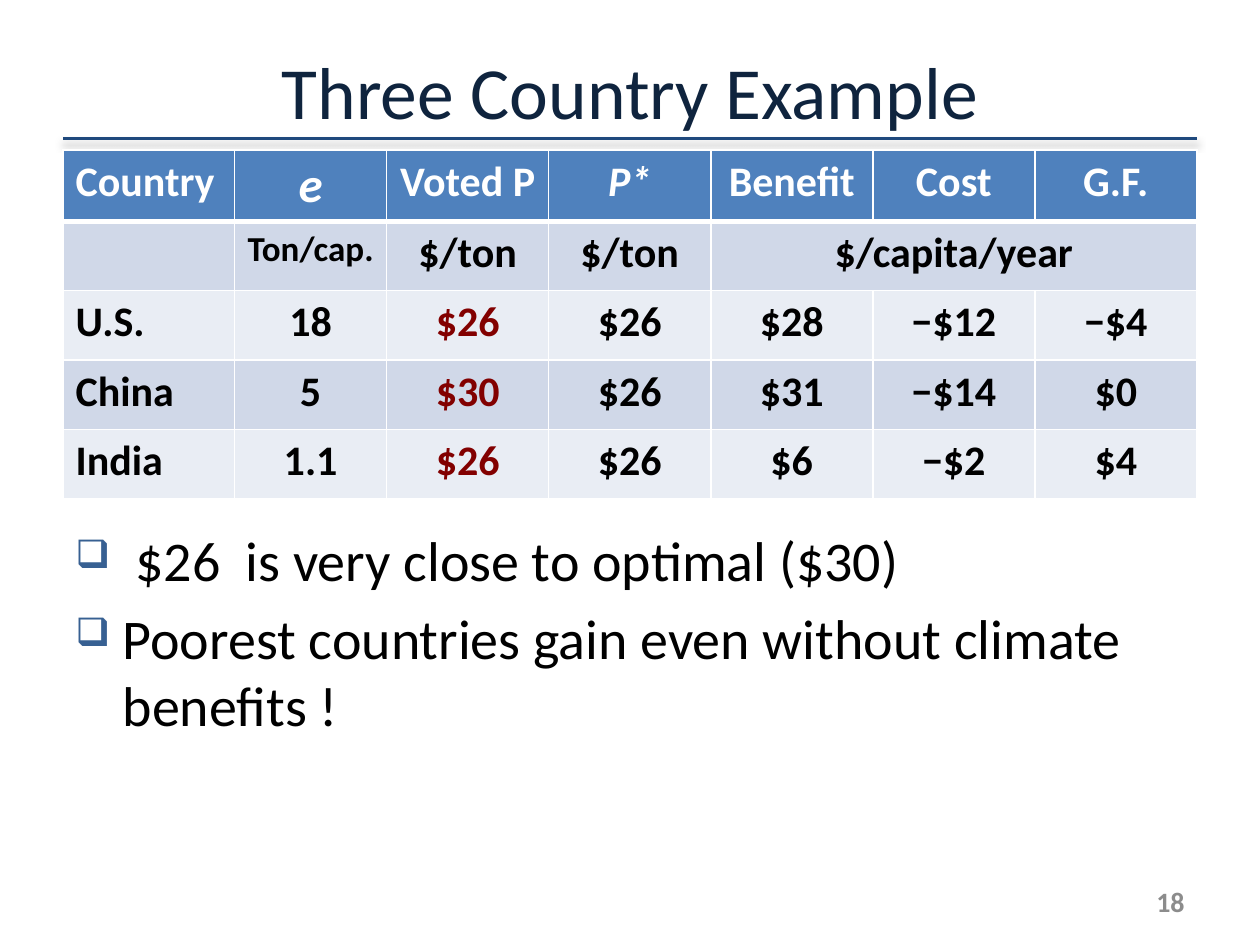
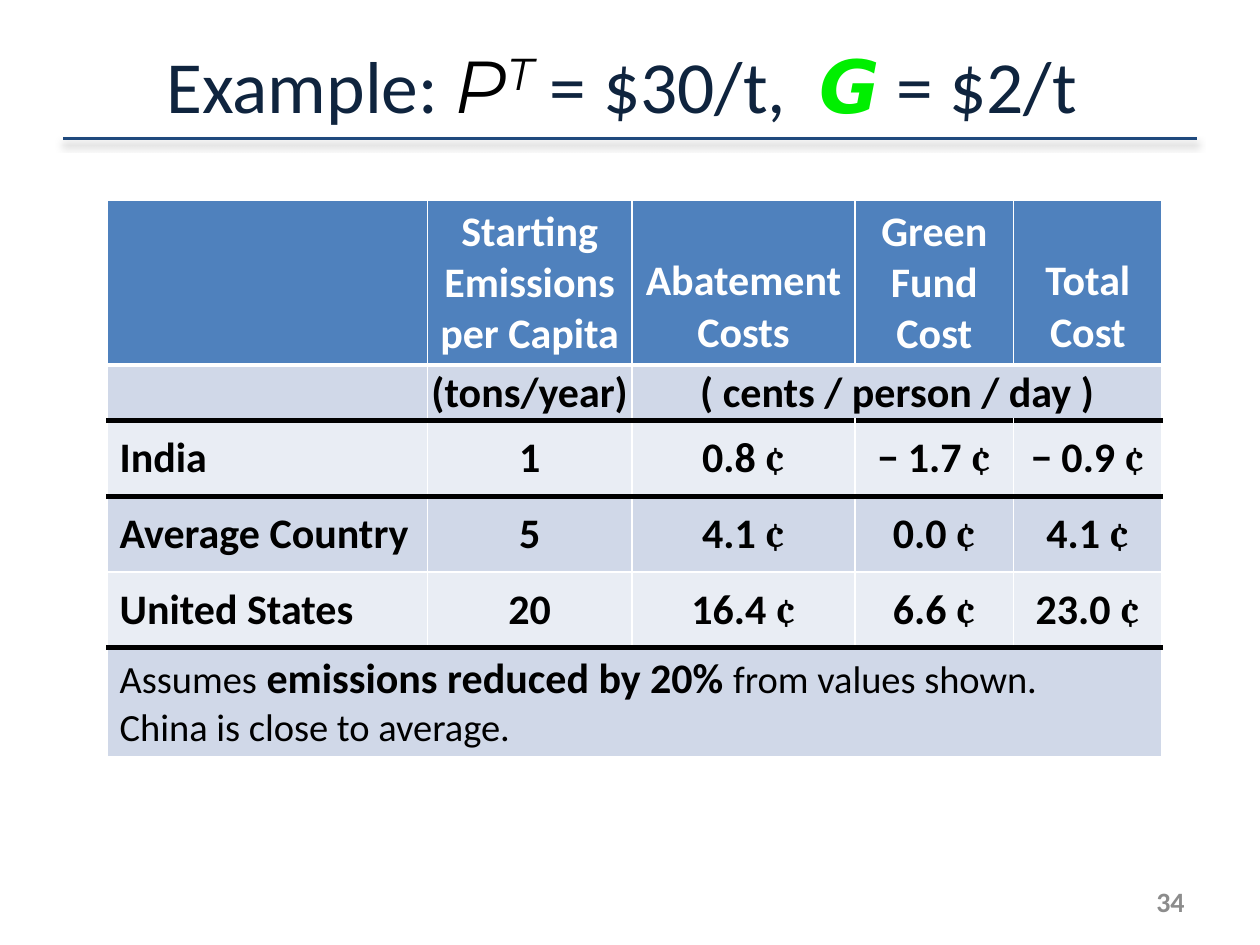
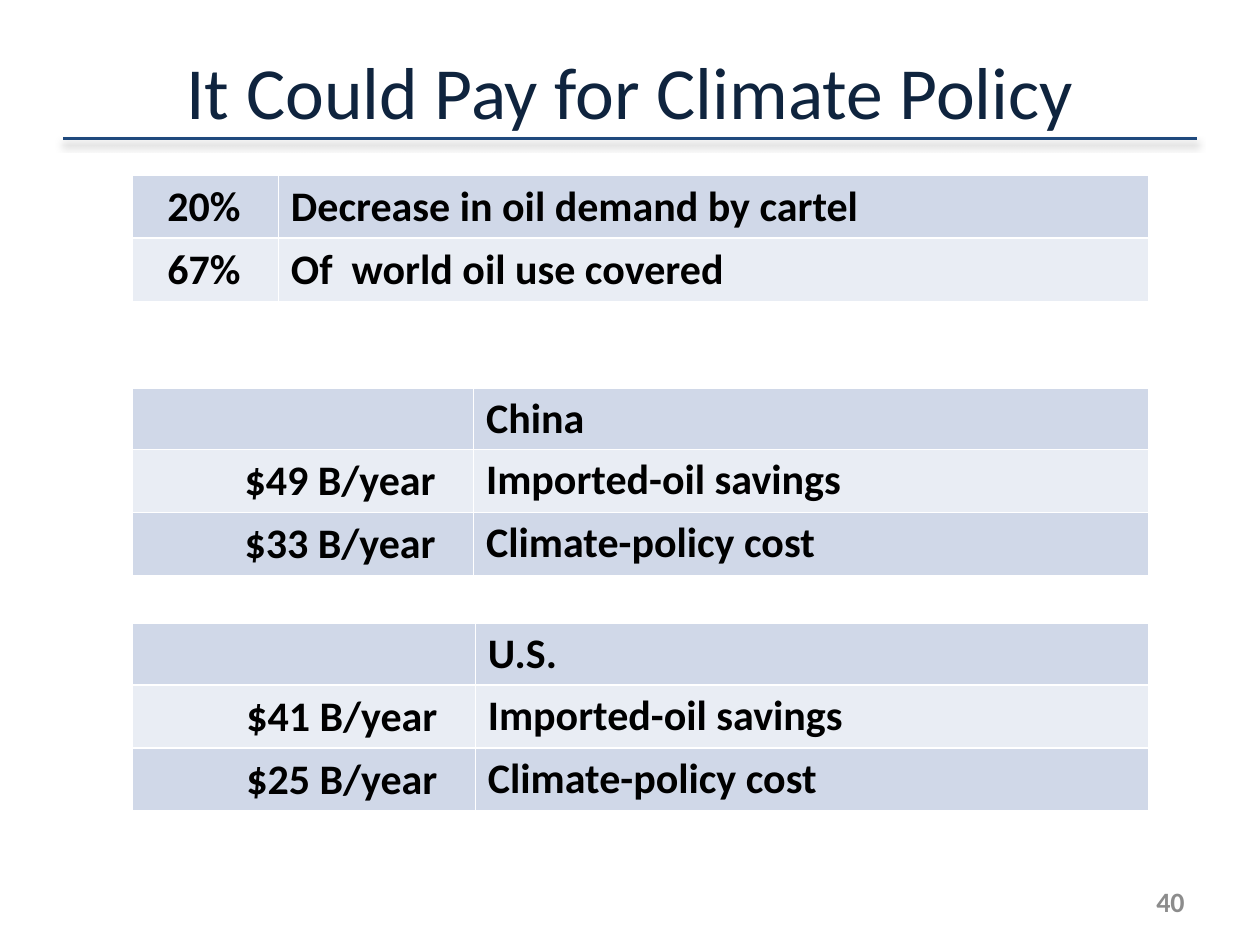
"""Build three climate policy slides with tables of costs and gains."""
from lxml import etree
from pptx import Presentation
from pptx.dml.color import RGBColor
from pptx.enum.shapes import MSO_CONNECTOR
from pptx.enum.text import MSO_ANCHOR, PP_ALIGN
from pptx.oxml import parse_xml
from pptx.oxml.ns import nsdecls, qn
from pptx.util import Pt

STRAIGHT = MSO_CONNECTOR.STRAIGHT
MIDDLE, BOTTOM = MSO_ANCHOR.MIDDLE, MSO_ANCHOR.BOTTOM
LEFT, CENTER, RIGHT = PP_ALIGN.LEFT, PP_ALIGN.CENTER, PP_ALIGN.RIGHT
SIDES = {"l": LEFT, "c": CENTER, "r": RIGHT}


class Theme:
    face, serif, math, strong = "Calibri", "Cambria", "Montserrat", "DejaVu Sans"
    black, white = "000000", "FFFFFF"
    navy, rule, bullet, gray = "0F243E", "1F497D", "376092", "8C8C8C"
    head, bands = "4F81BD", ("E9EDF4", "D0D8E8")
    red, green = "820000", "00EF00"
    title, power, body, cell, note, page = 42, 44, 32, 24, 22, 16
    unit, symbol = 20, 28


def write(par, text, size=Theme.cell, color=Theme.black, face=Theme.face,
          bold=False, italic=False, lift=0, edge=None):
    for bit in filter(None, text.partition("¢")):
        run = par.add_run()
        run.text = bit
        font = run.font
        font.size, font.bold, font.italic = Pt(size), bold, italic
        font.name = Theme.serif if bit == "¢" else face
        font.color.rgb = RGBColor.from_string(color)
        props = run._r.get_or_add_rPr()
        if lift:
            props.set("baseline", str(lift * 1000))
        if edge:
            props.insert(0, parse_xml(
                f'<a:ln {nsdecls("a")} w="{Pt(1)}"><a:solidFill>'
                f'<a:srgbClr val="{edge}"/></a:solidFill></a:ln>'))


def grid(slide, left, top, cols, rows, cells, sides, head=True, thick=None):
    thick = thick or {}
    table = slide.shapes.add_table(len(rows), len(cols), Pt(left), Pt(top),
                                   Pt(sum(cols)), Pt(sum(rows))).table
    table.first_row, table.horz_banding = head, False
    for col, width in zip(table.columns, cols):
        col.width = Pt(width)
    for r, height in enumerate(rows):
        table.rows[r].height = Pt(height)
        top_row = head and r == 0
        shade = Theme.head if top_row else Theme.bands[(r + head) % 2 if head else (r + 1) % 2]
        if head and r:
            shade = Theme.bands[r % 2]
        for c, side in enumerate(sides):
            cell = table.cell(r, c)
            props = cell._tc.get_or_add_tcPr()
            plain = (Theme.white, 1)
            lines = {"lnL": plain, "lnR": plain,
                     "lnT": thick.get(r, plain), "lnB": thick.get(r + 1, plain)}
            for name, (color, weight) in lines.items():
                line = etree.SubElement(props, qn("a:" + name), w=str(Pt(weight)))
                fill = etree.SubElement(line, qn("a:solidFill"))
                etree.SubElement(fill, qn("a:srgbClr"), val=color)
            cell.fill.solid()
            cell.fill.fore_color.rgb = RGBColor.from_string(shade)
            par = cell.text_frame.paragraphs[0]
            par.alignment = SIDES[side]
            if side == "r":
                cell.margin_right = Pt(21.6)
            item = cells[r][c] if c < len(cells[r]) else ""
            text, form = item if isinstance(item, tuple) else (item, {})
            base = {"bold": True, "color": Theme.white if top_row else Theme.black}
            write(par, text, **(base | form))
    return table


deck = Presentation()
deck.slide_width, deck.slide_height = Pt(720), Pt(540)

ink = {"size": Theme.title, "color": Theme.navy}
heads = [
    (18, 21.6, 74.2, [("Three Country Example", ink)]),
    (34, 15.8, 77.8, [
        ("Example: ", ink),
        ("P", {"size": Theme.title, "face": Theme.math, "italic": True}),
        ("T", {"size": Theme.power, "face": Theme.math, "italic": True, "lift": 30}),
        (" = $30/t,  ", ink),
        ("G", {"size": Theme.title, "face": Theme.strong, "color": Theme.green,
               "bold": True, "italic": True, "edge": Theme.black}),
        (" = $2/t ", ink)]),
    (40, 21.6, 74.2, [("It Could Pay for Climate Policy", ink)]),
]
for page, top, height, runs in heads:
    slide = deck.slides.add_slide(deck.slide_layouts[6])
    rule = slide.shapes.add_connector(STRAIGHT, Pt(36), Pt(79.2), Pt(684), Pt(79.2))
    rule.line.width = Pt(1.5)
    rule.line.color.rgb = RGBColor.from_string(Theme.rule)
    rule._element.spPr.append(parse_xml(
        f'<a:effectLst {nsdecls("a")}><a:outerShdw blurRad="{Pt(4)}" dist="{Pt(3)}" '
        f'dir="5400000" rotWithShape="0"><a:srgbClr val="{Theme.black}">'
        '<a:alpha val="40000"/></a:srgbClr></a:outerShdw></a:effectLst>'))

    frame = slide.shapes.add_textbox(Pt(36), Pt(top), Pt(648), Pt(height)).text_frame
    frame.word_wrap, frame.vertical_anchor = True, MIDDLE
    frame.margin_top, frame.margin_bottom = Pt(0), Pt(14.4)
    frame.paragraphs[0].alignment = CENTER
    for text, form in runs:
        write(frame.paragraphs[0], text, **form)

    frame = slide.shapes.add_textbox(Pt(516), Pt(500.4), Pt(168), Pt(28.8)).text_frame
    frame.word_wrap, frame.vertical_anchor = True, MIDDLE
    frame.paragraphs[0].alignment = RIGHT
    write(frame.paragraphs[0], str(page), size=Theme.page, color=Theme.gray, bold=True)

first, second, third = deck.slides

red = {"color": Theme.red}
votes = [
    ["Country", ("e", {"size": Theme.symbol, "italic": True}), "Voted P",
     ("P*", {"italic": True}), "Benefit", "Cost", "G.F."],
    ["", ("Ton/cap.", {"size": Theme.unit}), "$/ton", "$/ton", "$/capita/year"],
    ["U.S.", "18", ("$26", red), "$26", "$28", "−$12", "−$4"],
    ["China", "5", ("$30", red), "$26", "$31", "−$14", "$0"],
    ["India", "1.1", ("$26", red), "$26", "$6", "−$2", "$4"],
]
table = grid(first, 36, 85.7, [98, 87] + [92.6] * 5, [39.6] * 5, votes, "lcccccc",
             thick={1: (Theme.white, 3)})
table.cell(1, 4).merge(table.cell(1, 6))

frame = first.shapes.add_textbox(Pt(36), Pt(296.6), Pt(648), Pt(185.8)).text_frame
frame.word_wrap = True
points = [" $26  is very close to optimal ($30)",
          "Poorest countries gain even without climate benefits !"]
for i, text in enumerate(points):
    par = frame.add_paragraph() if i else frame.paragraphs[0]
    par.space_before = Pt(6.4)
    write(par, text, size=Theme.body)
    props = par._p.get_or_add_pPr()
    props.set("marL", str(Pt(27)))
    props.set("indent", str(-Pt(27)))
    color = etree.SubElement(props, qn("a:buClr"))
    etree.SubElement(color, qn("a:srgbClr"), val=Theme.bullet)
    etree.SubElement(props, qn("a:buSzPct"), val="70000")
    etree.SubElement(props, qn("a:buChar"), char="❑")

costs = [
    ["", "Starting Emissions per Capita", "Abatement Costs", "Green Fund Cost", "Total Cost"],
    ["", "(tons/year)", "( cents / person / day )"],
    ["India", "1", "0.8 ¢", "− 1.7 ¢", "− 0.9 ¢"],
    ["Average Country", "5", "4.1 ¢", "0.0 ¢", "4.1 ¢"],
    ["United States", "20", "16.4 ¢", "6.6 ¢", "23.0 ¢"],
    [],
]
bar = (Theme.black, 3)
table = grid(second, 61.2, 114.5, [183, 117, 127.5, 90.5, 85],
             [94, 32, 43.2, 43.2, 43.2, 62], costs, "lcccc",
             thick={1: (Theme.white, 3), 2: bar, 3: bar, 5: bar})
for c in range(5):
    table.cell(0, c).vertical_anchor = BOTTOM
    for r in range(1, 5):
        cell = table.cell(r, c)
        cell.vertical_anchor = MIDDLE
        if c:
            cell.margin_left = cell.margin_right = Pt(0)
            cell.margin_top = cell.margin_bottom = Pt(0)
table.cell(1, 2).merge(table.cell(1, 4))
table.cell(5, 0).merge(table.cell(5, 4))
par = table.cell(5, 0).text_frame.paragraphs[0]
write(par, "Assumes", size=Theme.note)
write(par, " emissions reduced by 20% ", bold=True)
write(par, "from values shown.", size=Theme.note)
par.add_line_break()
write(par, "China is close to average.", size=Theme.note)

oil = [["20%", "Decrease in oil demand by cartel"],
       ["67%", "Of  world oil use covered"]]
grid(third, 75.6, 100.1, [83.5, 497.5], [36, 36], oil, "rl", head=False)

lands = [("China", 221.8, 195, "$49 B/year", "$33 B/year"),
         ("U.S.", 356.4, 196, "$41 B/year", "$25 B/year")]
for land, top, width, gain, cost in lands:
    sums = [["", land], [gain, "Imported-oil savings"], [cost, "Climate-policy cost"]]
    table = grid(third, 75.6, top, [width, 581 - width], [35, 36, 36], sums, "rl", head=False)
    for r in range(3):
        table.cell(r, 1).text_frame.paragraphs[0].line_spacing = 0.95

deck.save("out.pptx")
